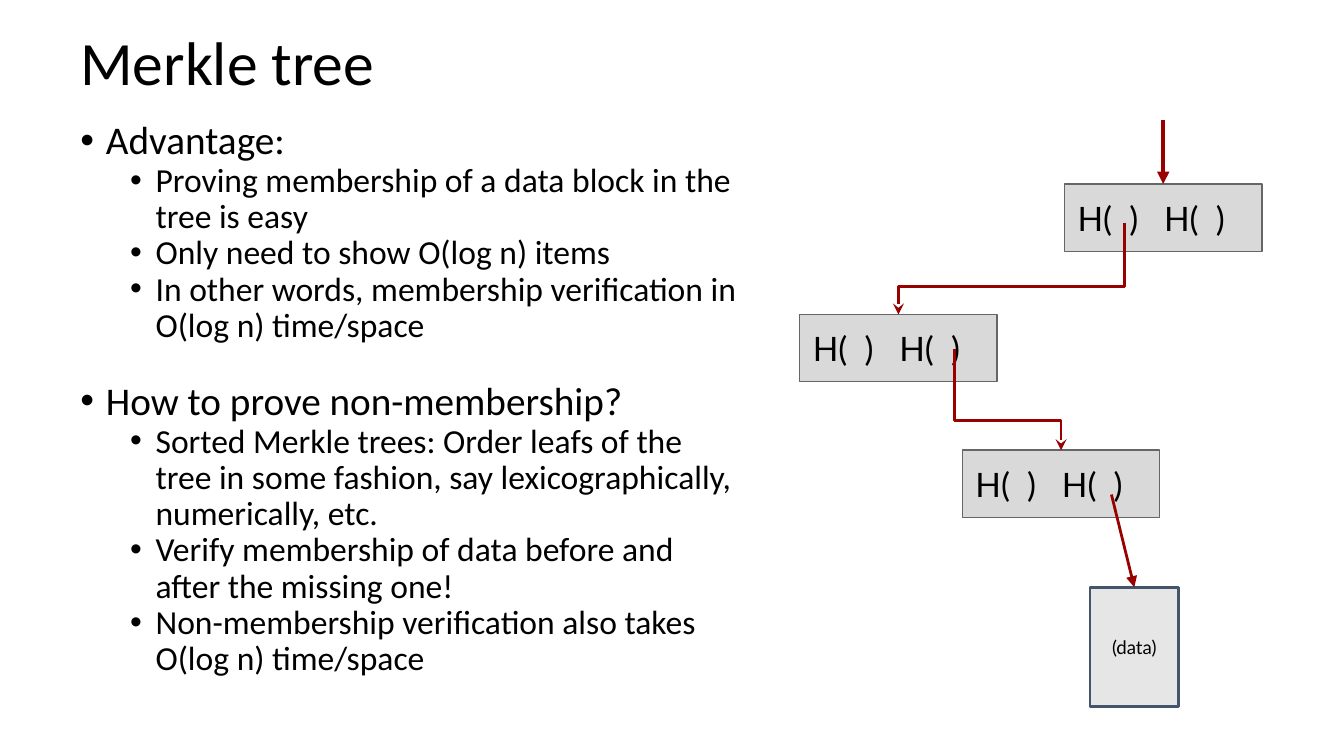
from dataclasses import dataclass

import pptx
import pptx.dml.color
import pptx.enum.shapes
import pptx.enum.text
import pptx.oxml
import pptx.oxml.ns
import pptx.util


@dataclass(frozen=True)
class Theme:
    ink: str = "000000"
    arrow: str = "990000"
    node_fill: str = "D9D9D9"
    node_line: str = "666666"
    data_fill: str = "E7E6E6"
    data_line: str = "44546A"
    text_font: str = "Calibri"
    diagram_font: str = "Lato"
    title_size: float = 33
    topic_size: float = 21
    point_size: float = 18
    data_size: float = 10


@dataclass(frozen=True)
class Area:
    column: float
    row: float
    columns: float
    rows: float

    @property
    def center(self) -> float:
        return self.column + self.columns / 2


@dataclass(frozen=True)
class Topic:
    heading: str
    points: tuple[str, ...]
    space_before: float = 0


THEME = Theme()
CELLS_PER_INCH = 10
NODE_COLUMNS, NODE_ROWS = 14.7, 5
NODES = [
    Area(column, row, NODE_COLUMNS, NODE_ROWS)
    for column, row in ((79.2, 13.7), (59.5, 23.4), (71.6, 33.5))
]
DATA = Area(81.1, 43.7, 6.6, 8.9)
TOPICS = (
    Topic("Advantage:", (
        "Proving membership of a data block in the tree is easy",
        "Only need to show O(log n) items",
        "In other words, membership verification in O(log n) time/space",
    )),
    Topic("How to prove non-membership?", (
        "Sorted Merkle trees: Order leafs of the tree in some fashion, "
        "say lexicographically, numerically, etc.",
        "Verify membership of data before and after the missing one!",
        "Non-membership verification also takes O(log n) time/space",
    ), space_before=19.8),
)


def grid(cells: float) -> int:
    return int(pptx.util.Inches(cells / CELLS_PER_INCH))


def place(area: Area) -> list[int]:
    return [grid(cells) for cells in (area.column, area.row, area.columns, area.rows)]


def color(value: str) -> pptx.dml.color.RGBColor:
    return pptx.dml.color.RGBColor.from_string(value)


def add_element(parent, tag: str, **attributes: str) -> None:
    element = pptx.oxml.parse_xml(f"<a:{tag} {pptx.oxml.ns.nsdecls('a')}/>")
    for name, value in attributes.items():
        element.set(name, value)
    parent.append(element)


def prepare_frame(shape, anchor=pptx.enum.text.MSO_ANCHOR.TOP):
    frame = shape.text_frame
    frame.word_wrap = True
    frame.vertical_anchor = anchor
    frame.margin_left = frame.margin_right = grid(1)
    frame.margin_top = frame.margin_bottom = grid(1)
    return frame


def write(para, text: str, *, size: float, font: str = THEME.text_font,
          align=pptx.enum.text.PP_ALIGN.LEFT, line_spacing: float = 1,
          space_before: float = 0, level: int = 0, bullet: bool = False) -> None:
    para.alignment = align
    para.line_spacing = line_spacing
    para.space_before = pptx.util.Pt(space_before)
    para.level = level
    if bullet:
        properties = para._p.get_or_add_pPr()
        properties.set("marL", str(grid(1.9 + 3.7 * level)))
        properties.set("indent", str(grid(-1.9)))
        add_element(properties, "buFont", typeface="Arial")
        add_element(properties, "buChar", char="•")
    span = para.add_run()
    span.text = text
    span.font.name = font
    span.font.size = pptx.util.Pt(size)
    span.font.color.rgb = color(THEME.ink)


def add_box(page, area: Area, text: str, *, fill: str, line: str, width: float,
            size: float, align=pptx.enum.text.PP_ALIGN.LEFT,
            anchor=pptx.enum.text.MSO_ANCHOR.TOP):
    box = page.shapes.add_shape(pptx.enum.shapes.MSO_SHAPE.RECTANGLE, *place(area))
    box.shadow.inherit = False
    box.fill.solid()
    box.fill.fore_color.rgb = color(fill)
    box.line.color.rgb = color(line)
    box.line.width = pptx.util.Pt(width)
    frame = prepare_frame(box, anchor)
    write(frame.paragraphs[0], text, size=size, font=THEME.diagram_font, align=align)
    return box


def style_arrow(shape, head: str, width: float) -> None:
    shape.line.color.rgb = color(THEME.arrow)
    shape.line.width = pptx.util.Pt(width)
    add_element(shape.line._get_or_add_ln(), "tailEnd", type=head)


def add_elbow(page, source: Area, across: float, down: float, turn: float,
              target: Area) -> None:
    start = source.column + across
    corners = ((start, turn), (target.center, turn), (target.center, target.row))
    builder = page.shapes.build_freeform(grid(start), grid(source.row + down))
    builder.add_line_segments([(grid(x), grid(y)) for x, y in corners], close=False)
    elbow = builder.convert_to_shape()
    elbow.shadow.inherit = False
    elbow.fill.background()
    style_arrow(elbow, "stealth", 1.5)


def add_arrow(page, column: float, row: float, target: Area, box, width: float) -> None:
    arrow = page.shapes.add_connector(
        pptx.enum.shapes.MSO_CONNECTOR.STRAIGHT,
        grid(column), grid(row), grid(target.center), grid(target.row))
    arrow.end_connect(box, 0)
    style_arrow(arrow, "triangle", width)
    add_element(arrow._element.spPr, "effectLst")


def add_text(page) -> None:
    title = prepare_frame(page.shapes.add_textbox(*place(Area(5, 1.4, 90, 7.5))))
    write(title.paragraphs[0], "Merkle tree", size=THEME.title_size, line_spacing=0.9)
    body = prepare_frame(page.shapes.add_textbox(*place(Area(5, 8, 51, 44.6))))
    for index, topic in enumerate(TOPICS):
        para = body.add_paragraph() if index else body.paragraphs[0]
        write(para, topic.heading, size=THEME.topic_size, line_spacing=0.9,
              space_before=topic.space_before, bullet=True)
        for point in topic.points:
            write(body.add_paragraph(), point, size=THEME.point_size,
                  line_spacing=0.9, level=1, bullet=True)


def add_tree(page) -> None:
    root, middle, lowest = NODES
    boxes = [
        add_box(page, node, "H(  )   H(  )", fill=THEME.node_fill,
                line=THEME.node_line, width=0.75, size=THEME.point_size)
        for node in NODES
    ]
    data_box = add_box(page, DATA, "(data)", fill=THEME.data_fill,
                       line=THEME.data_line, width=1.5, size=THEME.data_size,
                       align=pptx.enum.text.PP_ALIGN.CENTER,
                       anchor=pptx.enum.text.MSO_ANCHOR.MIDDLE)
    add_elbow(page, root, 4.5, 2.9, 21.3, middle)
    add_elbow(page, middle, 11.5, 2.6, 31.3, lowest)
    add_arrow(page, lowest.column + 11.1, lowest.row + 3.3, DATA, data_box, 1.5)
    add_arrow(page, root.center, 8.9, root, boxes[0], 2.25)


def main() -> None:
    deck = pptx.Presentation()
    deck.slide_width, deck.slide_height = grid(100), grid(56.25)
    page = deck.slides.add_slide(deck.slide_layouts[6])
    add_text(page)
    add_tree(page)
    deck.save("out.pptx")


if __name__ == "__main__":
    main()
